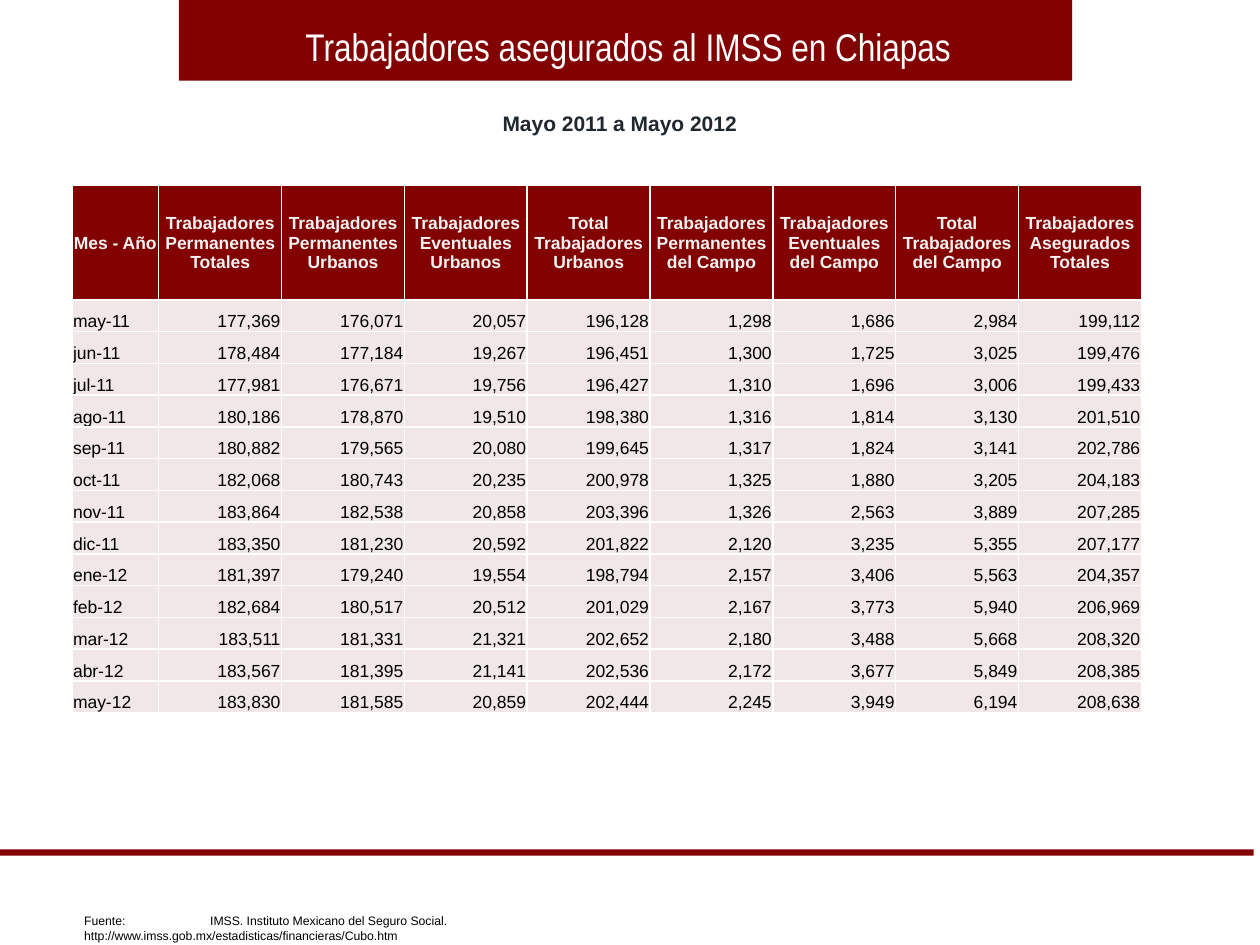
from lxml import etree
from pptx import Presentation
from pptx.dml.color import RGBColor
from pptx.enum import shapes, text
from pptx.oxml import ns
from pptx.util import Inches, Pt

MAROON, PALE, WHITE, BLACK = "820101", "F1E7E7", "FFFFFF", "000000"
ALIGN = text.PP_ALIGN

HEADINGS = [
    "Mes - Año",
    "Trabajadores Permanentes Totales",
    "Trabajadores Permanentes Urbanos",
    "Trabajadores Eventuales Urbanos",
    "Total Trabajadores Urbanos",
    "Trabajadores Permanentes del Campo",
    "Trabajadores Eventuales del Campo",
    "Total Trabajadores del Campo",
    "Trabajadores Asegurados Totales",
]
MONTHS = [
    ("may-11", 177369, 176071, 20057, 196128, 1298, 1686, 2984, 199112),
    ("jun-11", 178484, 177184, 19267, 196451, 1300, 1725, 3025, 199476),
    ("jul-11", 177981, 176671, 19756, 196427, 1310, 1696, 3006, 199433),
    ("ago-11", 180186, 178870, 19510, 198380, 1316, 1814, 3130, 201510),
    ("sep-11", 180882, 179565, 20080, 199645, 1317, 1824, 3141, 202786),
    ("oct-11", 182068, 180743, 20235, 200978, 1325, 1880, 3205, 204183),
    ("nov-11", 183864, 182538, 20858, 203396, 1326, 2563, 3889, 207285),
    ("dic-11", 183350, 181230, 20592, 201822, 2120, 3235, 5355, 207177),
    ("ene-12", 181397, 179240, 19554, 198794, 2157, 3406, 5563, 204357),
    ("feb-12", 182684, 180517, 20512, 201029, 2167, 3773, 5940, 206969),
    ("mar-12", 183511, 181331, 21321, 202652, 2180, 3488, 5668, 208320),
    ("abr-12", 183567, 181395, 21141, 202536, 2172, 3677, 5849, 208385),
    ("may-12", 183830, 181585, 20859, 202444, 2245, 3949, 6194, 208638),
]


def paint(fill, color):
    fill.solid()
    fill.fore_color.rgb = RGBColor.from_string(color)


def style(paragraph, size, color, align=ALIGN.LEFT, bold=False, face="Arial"):
    paragraph.alignment = align
    font = paragraph.font
    font.name, font.size, font.bold = face, Pt(size), bold
    font.color.rgb = RGBColor.from_string(color)


def add_band(slide, left, top, width, height):
    band = slide.shapes.add_shape(
        shapes.MSO_SHAPE.RECTANGLE, left, top, width, height)
    band.shadow.inherit = False
    paint(band.fill, MAROON)
    band.line.fill.background()


def add_label(slide, left, top, width, height, wording, wrap=True):
    """Add a one-paragraph text box and return its paragraph."""
    frame = slide.shapes.add_textbox(left, top, width, height).text_frame
    frame.word_wrap = wrap
    frame.auto_size = text.MSO_AUTO_SIZE.SHAPE_TO_FIT_TEXT
    paragraph = frame.paragraphs[0]
    paragraph.text = wording
    return paragraph


def add_title(slide, left, top, width, height):
    add_band(slide, left, top, width, height)
    title = add_label(slide, left + Inches(0.04), top + Inches(0.13),
                      width - Inches(0.04), Inches(0.47),
                      "Trabajadores asegurados al IMSS en Chiapas")
    style(title, 22, WHITE, ALIGN.CENTER, face="Arial Narrow")


def add_period(slide, left, top, width, height):
    period = add_label(slide, left, top, width, height,
                       "Mayo 2011 a Mayo 2012", wrap=False)
    style(period, 12, "21272E", bold=True)


def add_source(slide, left, top, width, height):
    source = add_label(
        slide, left, top, width, height,
        "Fuente:\tIMSS. Instituto Mexicano del Seguro Social. "
        "http://www.imss.gob.mx/estadisticas/financieras/Cubo.htm")
    tabs = etree.SubElement(source._p.get_or_add_pPr(), ns.qn("a:tabLst"))
    etree.SubElement(tabs, ns.qn("a:tab"), pos=str(Inches(1)), algn="l")
    style(source, 7, BLACK)


def add_borders(cell, color, width):
    properties = cell._tc.get_or_add_tcPr()
    for position, side in enumerate("LRTB"):
        line = etree.Element(ns.qn(f"a:ln{side}"), w=str(Pt(width)))
        fill = etree.SubElement(line, ns.qn("a:solidFill"))
        etree.SubElement(fill, ns.qn("a:srgbClr"), val=color)
        properties.insert(position, line)


def fill_cell(cell, wording, fill, anchor):
    """Fill a table cell and return its paragraph."""
    cell.margin_left = cell.margin_right = cell.margin_top = Inches(0.01)
    cell.margin_bottom = 0
    cell.vertical_anchor = anchor
    paint(cell.fill, fill)
    add_borders(cell, WHITE, 1)
    paragraph = cell.text_frame.paragraphs[0]
    paragraph.text = wording
    return paragraph


def add_workers_table(slide, left, top, width, height):
    table = slide.shapes.add_table(len(MONTHS) + 1, len(HEADINGS),
                                   left, top, width, height).table
    month_width, heading_height = Inches(0.69), Inches(0.91)
    for index, column in enumerate(table.columns):
        column.width = (int((width - month_width) / (len(HEADINGS) - 1))
                        if index else month_width)
    for index, row in enumerate(table.rows):
        row.height = (int((height - heading_height) / len(MONTHS))
                      if index else heading_height)

    for column, heading in enumerate(HEADINGS):
        paragraph = fill_cell(table.cell(0, column), heading, MAROON,
                              text.MSO_ANCHOR.MIDDLE)
        style(paragraph, 10, "F2F2F2", ALIGN.CENTER, bold=True)
    for row, (month, *counts) in enumerate(MONTHS, 1):
        wordings = [month] + [f"{count:,}" for count in counts]
        for column, wording in enumerate(wordings):
            paragraph = fill_cell(table.cell(row, column), wording, PALE,
                                  text.MSO_ANCHOR.BOTTOM)
            style(paragraph, 10, BLACK, ALIGN.RIGHT if column else ALIGN.LEFT)


def main():
    deck = Presentation()
    deck.slide_width, deck.slide_height = Inches(10), Inches(7.5)
    slide = deck.slides.add_slide(deck.slide_layouts[6])
    add_title(slide, Inches(1.42), 0, Inches(7.09), Inches(0.64))
    add_band(slide, 0, Inches(6.74), Inches(9.95), Inches(0.05))
    add_period(slide, Inches(3.89), Inches(0.83), Inches(2.08), Inches(0.3))
    add_source(slide, Inches(0.57), Inches(7.2), Inches(5.08), Inches(0.22))
    add_workers_table(slide, Inches(0.57), Inches(1.47),
                      Inches(8.49), Inches(4.19))
    deck.save("out.pptx")


if __name__ == "__main__":
    main()
